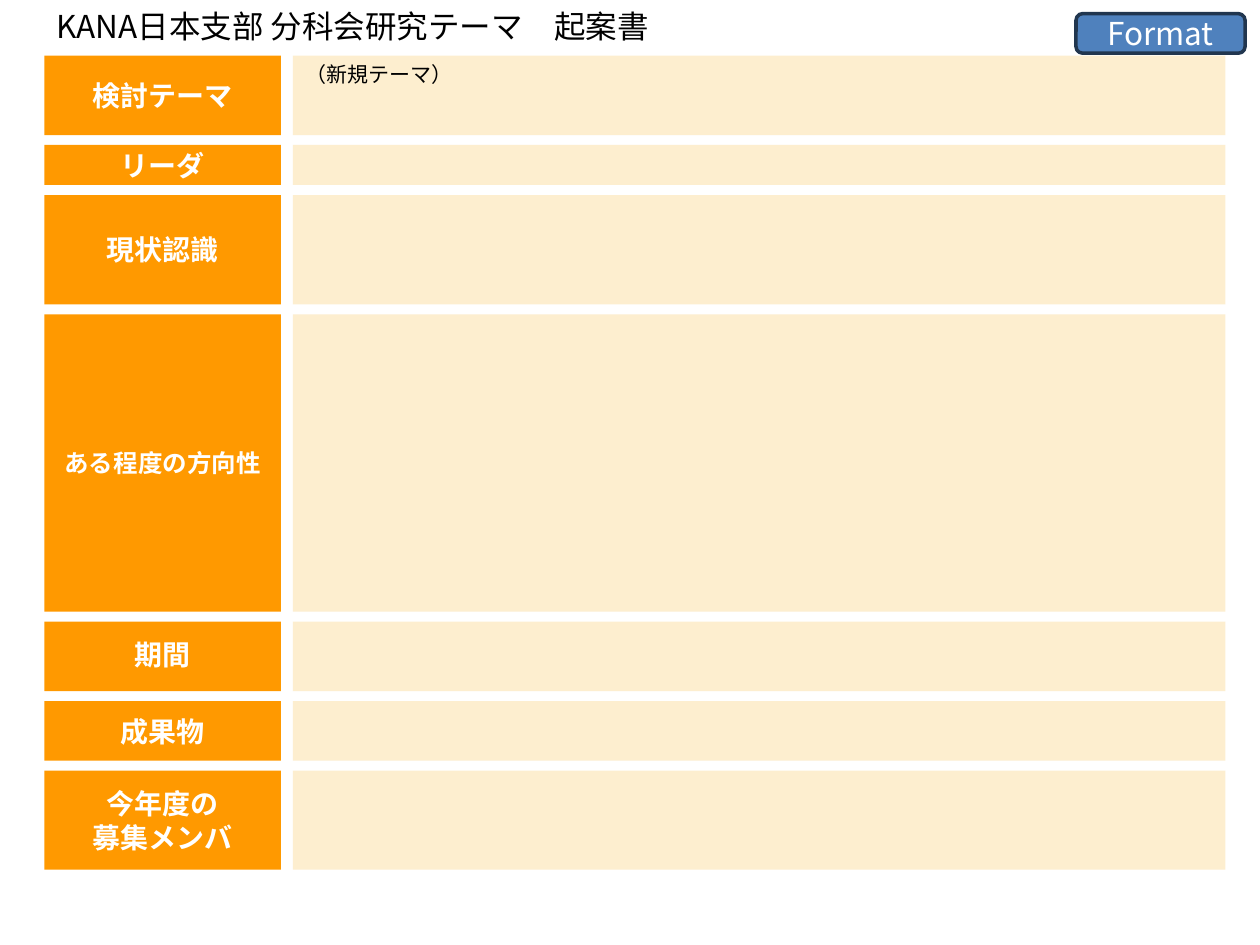
from pptx import Presentation
from pptx.dml.color import RGBColor
from pptx.enum.shapes import MSO_SHAPE
from pptx.enum.text import MSO_ANCHOR, MSO_AUTO_SIZE, PP_ALIGN
from pptx.oxml.ns import qn
from pptx.util import Pt
from lxml.etree import SubElement

FONT = "Noto Sans CJK JP"
COLORS = {
    "label": "FF9900",
    "field": "FDEECF",
    "badge": "4F81BD",
    "badge_line": "21364F",
    "light": "FFFFFF",
    "dark": "000000",
}
LABEL_WIDTH = 135.2
COLUMN_GAP = 6.8
ROW_GAP = 5.67

# label, height, further formats of the label, text of the field
ROWS = [
    ("検討テーマ", 45.4, {}, "（新規テーマ）"),
    ("リーダ", 22.9, {}, ""),
    ("現状認識", 62.5, {}, ""),
    ("ある程度の方向性", 170, {"size": 14}, ""),
    ("期間", 39.7, {"line_spacing": 0.9}, ""),
    ("成果物", 34, {}, ""),
    ("今年度の\n募集メンバ", 56.7, {}, ""),
]


def rgb(name):
    return RGBColor.from_string(COLORS[name])


def write(shape, text, size=16, color="dark", bold=False,
          align=PP_ALIGN.LEFT, anchor=MSO_ANCHOR.TOP, line_spacing=None):
    frame = shape.text_frame
    frame.word_wrap = True
    frame.vertical_anchor = anchor
    frame.text = text
    for para in frame.paragraphs:
        para.alignment = align
        para.line_spacing = line_spacing
        for span in para.runs:
            font = span.font
            font.name = FONT
            font.size = Pt(size)
            font.bold = bold
            font.color.rgb = rgb(color)
            # Japanese glyphs take the East Asian typeface
            SubElement(font._element, qn("a:ea"), typeface=FONT)


def add_box(page, box, fill, kind=MSO_SHAPE.RECTANGLE):
    shape = page.shapes.add_shape(kind, *map(Pt, box))
    shape.shadow.inherit = False
    shape.fill.solid()
    shape.fill.fore_color.rgb = rgb(fill)
    shape.line.fill.background()
    return shape


def add_title(page, box):
    title = page.shapes.add_textbox(*map(Pt, box))
    write(title, "KANA日本支部 分科会研究テーマ　起案書", size=18, line_spacing=0.9)
    title.text_frame.auto_size = MSO_AUTO_SIZE.SHAPE_TO_FIT_TEXT


def add_badge(page, box):
    badge = add_box(page, box, "badge", MSO_SHAPE.ROUNDED_RECTANGLE)
    badge.line.color.rgb = rgb("badge_line")
    badge.line.width = Pt(2)
    write(badge, "Format", size=18, color="light",
          align=PP_ALIGN.CENTER, anchor=MSO_ANCHOR.MIDDLE)


def add_form(page, left, top, width):
    """Stack the rows, each with a label on the left and a field on the right."""
    field_offset = LABEL_WIDTH + COLUMN_GAP
    for text, height, label_format, field_text in ROWS:
        label = add_box(page, (left, top, LABEL_WIDTH, height), "label")
        write(label, text, color="light", bold=True, align=PP_ALIGN.CENTER,
              anchor=MSO_ANCHOR.MIDDLE, **label_format)
        field = add_box(
            page, (left + field_offset, top, width - field_offset, height), "field")
        if field_text:
            write(field, field_text, size=12)
        top += height + ROW_GAP


def main():
    deck = Presentation()
    deck.slide_width, deck.slide_height = Pt(720), Pt(540)
    page = deck.slides.add_slide(deck.slide_layouts[6])
    add_form(page, left=25.4, top=31.8, width=674.8)
    add_title(page, (25.2, 2.9, 470.9, 26.6))
    add_badge(page, (614.9, 7.8, 96.6, 22.6))
    deck.save("out.pptx")


if __name__ == "__main__":
    main()
